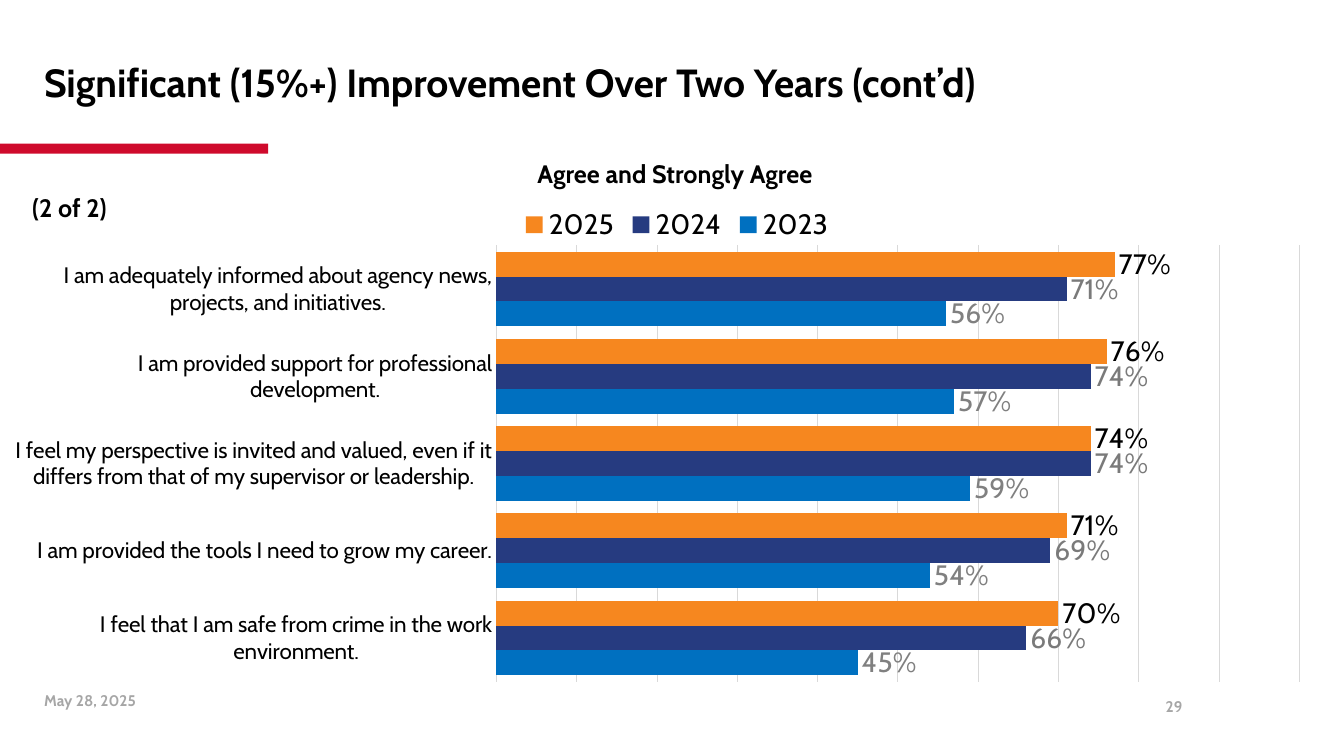
from pptx import Presentation
from pptx.chart.data import CategoryChartData
from pptx.dml.color import RGBColor
from pptx.enum.chart import XL_CHART_TYPE, XL_LABEL_POSITION, XL_LEGEND_POSITION, XL_TICK_MARK
from pptx.enum.shapes import MSO_SHAPE
from pptx.enum.text import MSO_ANCHOR, PP_ALIGN
from pptx.oxml import parse_xml
from pptx.oxml.ns import nsdecls, qn
from pptx.util import Cm, Pt


def style_font(font, size, color, bold=False):
    font.name = "Cabin"
    font.size = Pt(size)
    font.bold = bold
    font.color.rgb = RGBColor.from_string(color)


def add_text(text, left, top, width, height, size, color="000000",
             align=PP_ALIGN.LEFT, anchor=MSO_ANCHOR.TOP):
    sp = s.shapes.add_textbox(Cm(left), Cm(top), Cm(width), Cm(height))
    tf = sp.text_frame
    tf.word_wrap = True
    tf.vertical_anchor = anchor
    p = tf.paragraphs[0]
    p.alignment = align
    r = p.add_run()
    r.text = text
    style_font(r.font, size, color, True)
    return p


prs = Presentation()
prs.slide_width, prs.slide_height = Cm(33.87), Cm(19.05)
s = prs.slides.add_slide(prs.slide_layouts[6])

# Title and red accent bar
bar = s.shapes.add_shape(MSO_SHAPE.RECTANGLE, Cm(0), Cm(3.62), Cm(6.76), Cm(0.25))
bar.shadow.inherit = False
bar.fill.solid()
bar.fill.fore_color.rgb = RGBColor.from_string("CF0A2C")
bar.line.fill.background()
title = add_text("Significant (15%+) Improvement Over Two Years (cont’d)",
                 0.86, 0.58, 32.1, 3.12, 28, anchor=MSO_ANCHOR.MIDDLE)
title.line_spacing = 0.9

# Survey chart, categories listed from bottom to top
data = CategoryChartData(number_format="0%")
data.categories = [
    "I feel that I am safe from crime in the work environment.",
    "I am provided the tools I need to grow my career.",
    "I feel my perspective is invited and valued, even if it differs from that of my supervisor or leadership.",
    "I am provided support for professional development.",
    "I am adequately informed about agency news, projects, and initiatives.",
]
years = [
    ("2023", (0.45, 0.54, 0.59, 0.57, 0.56), "0070C0", "808080"),
    ("2024", (0.66, 0.69, 0.74, 0.74, 0.71), "263B80", "7A7A7A"),
    ("2025", (0.70, 0.71, 0.74, 0.76, 0.77), "F6871F", "000000"),
]
for year, values, _, _ in years:
    data.add_series(year, values)
chart = s.shapes.add_chart(XL_CHART_TYPE.BAR_CLUSTERED, Cm(0.2), Cm(4.9),
                           Cm(33.73), Cm(12.98), data).chart
style_font(chart.font, 20, "000000")
chart.has_title = False
chart.has_legend = True
chart.legend.position = XL_LEGEND_POSITION.TOP
chart.legend.include_in_layout = False
style_font(chart.legend.font, 20, "000000")

plot = chart.plots[0]
plot.gap_width = 50
plot.overlap = 0
plot.vary_by_categories = False
for ser, (_, _, color, label_color) in zip(plot.series, years):
    ser.format.fill.solid()
    ser.format.fill.fore_color.rgb = RGBColor.from_string(color)
    labels = ser.data_labels
    labels.show_value = True
    labels.position = XL_LABEL_POSITION.OUTSIDE_END
    labels.number_format = "0%"
    labels.number_format_is_linked = False
    style_font(labels.font, 20, label_color)

cat_axis, val_axis = chart.category_axis, chart.value_axis
cat_axis.major_tick_mark = XL_TICK_MARK.NONE
style_font(cat_axis.tick_labels.font, 16, "000000")
val_axis.visible = False
val_axis.minimum_scale, val_axis.maximum_scale, val_axis.major_unit = 0, 1, 0.1
val_axis.has_major_gridlines = True
for line in (cat_axis.format.line, val_axis.major_gridlines.format.line):
    line.color.rgb = RGBColor.from_string("D9D9D9")
    line.width = Pt(0.75)

# Fixed inner plot area, as fractions of the chart
plot_area = chart.element.find(".//" + qn("c:plotArea"))
for layout in plot_area.findall(qn("c:layout")):
    plot_area.remove(layout)
plot_area.insert(0, parse_xml(
    f'<c:layout {nsdecls("c")}><c:manualLayout><c:layoutTarget val="inner"/>'
    '<c:xMode val="edge"/><c:yMode val="edge"/><c:x val="0.365"/><c:y val="0.099"/>'
    '<c:w val="0.6"/><c:h val="0.847"/></c:manualLayout></c:layout>'))

# Headings and footer
add_text("Agree and Strongly Agree", 0.08, 3.86, 33.86, 1.02, 18, align=PP_ALIGN.CENTER)
add_text("(2 of 2)", 0.56, 4.72, 5.21, 1.02, 18)
add_text("29", 22.43, 17.3, 7.62, 1.02, 11, "A6A6A6", PP_ALIGN.RIGHT, MSO_ANCHOR.MIDDLE)
add_text("May 28, 2025", 0.86, 17.3, 7.8, 1.02, 11, "A6A6A6")

prs.save("out.pptx")
